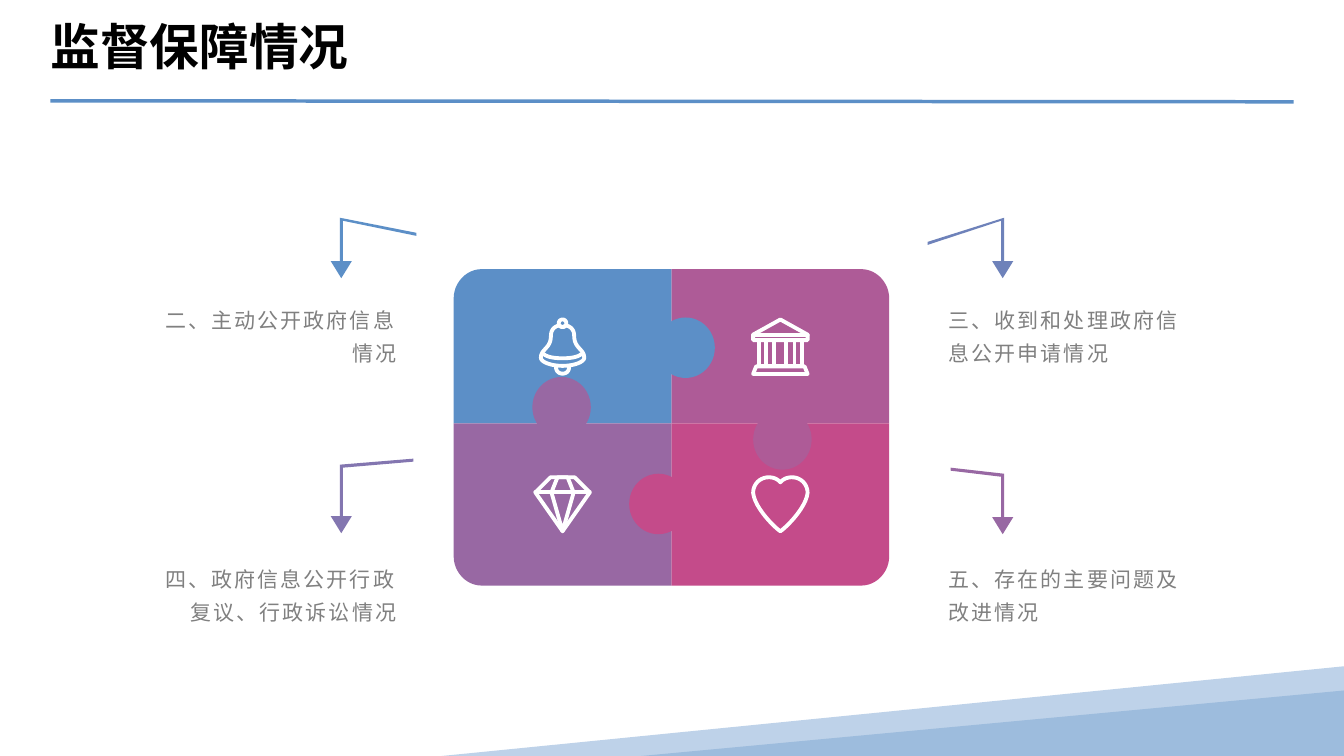
from lxml.etree import SubElement
from pptx import Presentation
from pptx.dml.color import RGBColor
from pptx.enum.shapes import MSO_CONNECTOR as Connector, MSO_SHAPE as Shape
from pptx.enum.text import MSO_ANCHOR as Anchor, MSO_AUTO_SIZE as AutoSize, PP_ALIGN as Align
from pptx.oxml.ns import qn
from pptx.util import Inches, Pt

FONT = "Noto Sans CJK SC"
BLACK, WHITE, GREY = RGBColor(0, 0, 0), RGBColor(255, 255, 255), RGBColor(0x80, 0x80, 0x80)
BLUE, PLUM = RGBColor(0x5C, 0x8F, 0xC7), RGBColor(0xAE, 0x5B, 0x97)
PURPLE, PINK = RGBColor(0x98, 0x68, 0xA3), RGBColor(0xC4, 0x4B, 0x8A)
SLATE, VIOLET = RGBColor(0x6E, 0x82, 0xBA), RGBColor(0x83, 0x76, 0xB0)
PALE, SKY = RGBColor(0xBE, 0xD2, 0xE9), RGBColor(0x9D, 0xBC, 0xDD)

# Content
WIDTH, HEIGHT = 13.33, 7.5
MARGIN = 0.5
TITLE = "监督保障情况"

# Right half of each icon, in hundredths of an inch from its centre.
# Pairs are corners; six numbers are a Bezier curve.
BELL = [
    [(0, -27), (5, -27, 5, -19.5, 0, -19.5)],
    [(0, -19.5), (4, -21), (9, -19.5, 11.5, -16, 11.5, -11),
     (11.5, 2, 21.5, 2, 21.5, 11), (21.5, 15, 12, 19, 0, 19)],
    [(19, 7), (16, 10, 9, 11.5, 0, 11.5)],
    [(6.5, 20), (6.5, 25, 3, 26.7, 0, 26.7)],
]
TEMPLE = [
    [(0, -27), (27, -12), (27, -6.5)],
    [(0, -12), (27, -12)],
    [(0, 19.5), (24, 19.5), (27, 27)],
] + [[(x, -6.5), (x, 19.5)] for x in (6, 14, 21.5)]
DIAMOND = [
    [(0, 27), (27, -11.5), (12, -26.5)],
    [(0, -11.5), (27, -11.5)],
    [(0, 27), (11, -11.5), (5, -26.5)],
]
HEART = [[(0, -21.5), (3, -25, 7, -26.5, 11.5, -26.5),
          (20, -26.5, 27, -20, 27, -11), (25.5, 4, 5, 24, 0, 27)]]

# column, row, caption, piece colour, icon, arrow colour, arrow tip, bend, stem end
QUARTERS = [
    (1, 0, "三、收到和处理政府信息公开申请情况", PLUM, TEMPLE, SLATE, (9.2, 2.4), 2.16, 2.64),
    (0, 0, "二、主动公开政府信息情况", BLUE, BELL, BLUE, (4.13, 2.31), 2.16, 2.64),
    (1, 1, "五、存在的主要问题及改进情况", PINK, HEART, PURPLE, (9.43, 4.64), 4.7, 5.18),
    (0, 1, "四、政府信息公开行政复议、行政诉讼情况", PURPLE, DIAMOND, VIOLET, (4.1, 4.55), 4.61, 5.17),
]
KNOBS = [(6.24, 4.7, PINK), (6.51, 3.15, BLUE), (7.47, 4.06, PLUM), (5.28, 3.74, PURPLE)]

# Grid
CENTRE_X, CENTRE_Y = 6.66, 4.2
PIECE_WIDTH, PIECE_HEIGHTS = 2.16, (1.53, 1.61)
ICON_X, ICON_Y = (5.58, 7.74), (3.44, 5.0)
CAPTION_X, CAPTION_Y = (1.43, 9.31), (2.93, 5.5)
STEM_X, STEM = (3.37, 9.96), 0.03

deck = Presentation()
deck.slide_width, deck.slide_height = Inches(WIDTH), Inches(HEIGHT)
page = deck.slides.add_slide(deck.slide_layouts[5])


def flatten(path, steps=12):
    """Turn corners and Bezier curves into plain points."""
    points = [path[0]]
    for part in path[1:]:
        if len(part) == 2:
            points.append(part)
            continue
        (x0, y0), (x1, y1, x2, y2, x3, y3) = points[-1], part
        for step in range(1, steps + 1):
            t = step / steps
            a, b, c, d = (1 - t) ** 3, 3 * t * (1 - t) ** 2, 3 * t * t * (1 - t), t ** 3
            points.append((a * x0 + b * x1 + c * x2 + d * x3,
                           a * y0 + b * y1 + c * y2 + d * y3))
    return points


def paint(shape, fill=None, line=None, weight=2.75):
    shape.shadow.inherit = False
    if fill is None:
        shape.fill.background()
    else:
        shape.fill.solid()
        shape.fill.fore_color.rgb = fill
    if line is None:
        shape.line.fill.background()
    else:
        shape.line.color.rgb = line
        shape.line.width = Pt(weight)
    return shape


def add_outline(contours, **look):
    """Draw one freeform from (points, closed) contours."""
    builder = None
    for points, closed in contours:
        first, *rest = [(Inches(x), Inches(y)) for x, y in points]
        if builder is None:
            builder = page.shapes.build_freeform(*first)
        else:
            builder.move_to(*first)
        builder.add_line_segments(rest, close=closed)
    return paint(builder.convert_to_shape(), **look)


def add_preset(kind, x, y, width, height, fill):
    box = page.shapes.add_shape(kind, Inches(x), Inches(y), Inches(width), Inches(height))
    return paint(box, fill=fill)


def write(box, text, size, color, align=Align.LEFT, leading=1.0, spacing=0, bold=False,
          anchor=Anchor.TOP, inset=(0.1, 0.05)):
    frame = box.text_frame
    frame.word_wrap, frame.auto_size = True, AutoSize.NONE
    frame.vertical_anchor = anchor
    frame.margin_left = frame.margin_right = Inches(inset[0])
    frame.margin_top = frame.margin_bottom = Inches(inset[1])
    para = frame.paragraphs[0]
    para.alignment, para.line_spacing = align, leading
    span = para.add_run()
    span.text = text
    span.font.size, span.font.bold, span.font.name = Pt(size), bold, FONT
    span.font.color.rgb = color
    properties = span._r.get_or_add_rPr()
    if spacing:
        properties.set("spc", str(int(spacing * 100)))
    east_asian = SubElement(properties, qn("a:ea"))
    east_asian.set("typeface", FONT)
    properties.find(qn("a:latin")).addnext(east_asian)


def add_icon(strokes, x, y):
    contours = []
    for stroke in strokes:
        half = flatten(stroke)
        whole = half + [(-u, v) for u, v in reversed(half)]
        contours.append(([(x + u / 100, y + v / 100) for u, v in whole], stroke[0][0] == 0))
    add_outline(contours, line=WHITE)


# Slanted bands at the foot
add_outline([([(WIDTH, 6.61), (WIDTH, 7.44), (8.97, HEIGHT), (4.38, HEIGHT)], True)], fill=PALE)
band = add_preset(Shape.ISOSCELES_TRIANGLE, 6.36, 6.85, WIDTH - 6.36, HEIGHT - 6.85, SKY)
band.adjustments[0] = 1

# Title and rule
title = page.shapes.title
title.left, title.top = Inches(MARGIN), Inches(0.17)
title.width, title.height = Inches(WIDTH - 2 * MARGIN), Inches(0.67)
write(title, TITLE, 35.5, BLACK, leading=0.8, bold=True, anchor=Anchor.MIDDLE, inset=(0, 0))
rule = page.shapes.add_connector(Connector.STRAIGHT, Inches(MARGIN), Inches(1),
                                 Inches(WIDTH - MARGIN), Inches(1.01))
rule.line.color.rgb, rule.line.width = BLUE, Pt(2.5)
SubElement(rule._element.spPr, qn("a:effectLst"))

# Puzzle pieces, each with its outer corner rounded
for column, row, _, color, *_ in QUARTERS:
    w, h = PIECE_WIDTH, PIECE_HEIGHTS[row]
    side, fall = 2 * column - 1, 2 * row - 1
    corner = flatten([(0, 0), (w, 0), (w, h - 0.29),
                      (w, h - 0.14, w - 0.12, h, w - 0.28, h), (0, h)])
    add_outline([([(CENTRE_X + side * x, CENTRE_Y + fall * y) for x, y in corner], True)],
                fill=color)
for x, y, color in KNOBS:
    add_preset(Shape.OVAL, x, y, 0.58, 0.6, color)

# Icons, arrows and captions
for column, row, caption, _, icon, color, tip, bend, end in QUARTERS:
    add_icon(icon, ICON_X[column], ICON_Y[row])
    outer = STEM_X[column]
    inner = outer + STEM * (1 - 2 * column)
    add_outline([([tip, (tip[0], tip[1] + STEM), (inner, bend + STEM), (inner, end),
                   (outer, end), (outer, bend)], True)], fill=color)
    add_preset(Shape.FLOWCHART_MERGE, (inner + outer - 0.21) / 2, end - 0.05, 0.21, 0.17, color)
    box = page.shapes.add_textbox(Inches(CAPTION_X[column]), Inches(CAPTION_Y[row]),
                                  Inches(2.6), Inches(0.84))
    write(box, caption, 15, GREY, align=(Align.RIGHT, Align.LEFT)[column],
          leading=1.3, spacing=1.5)

deck.save("out.pptx")
